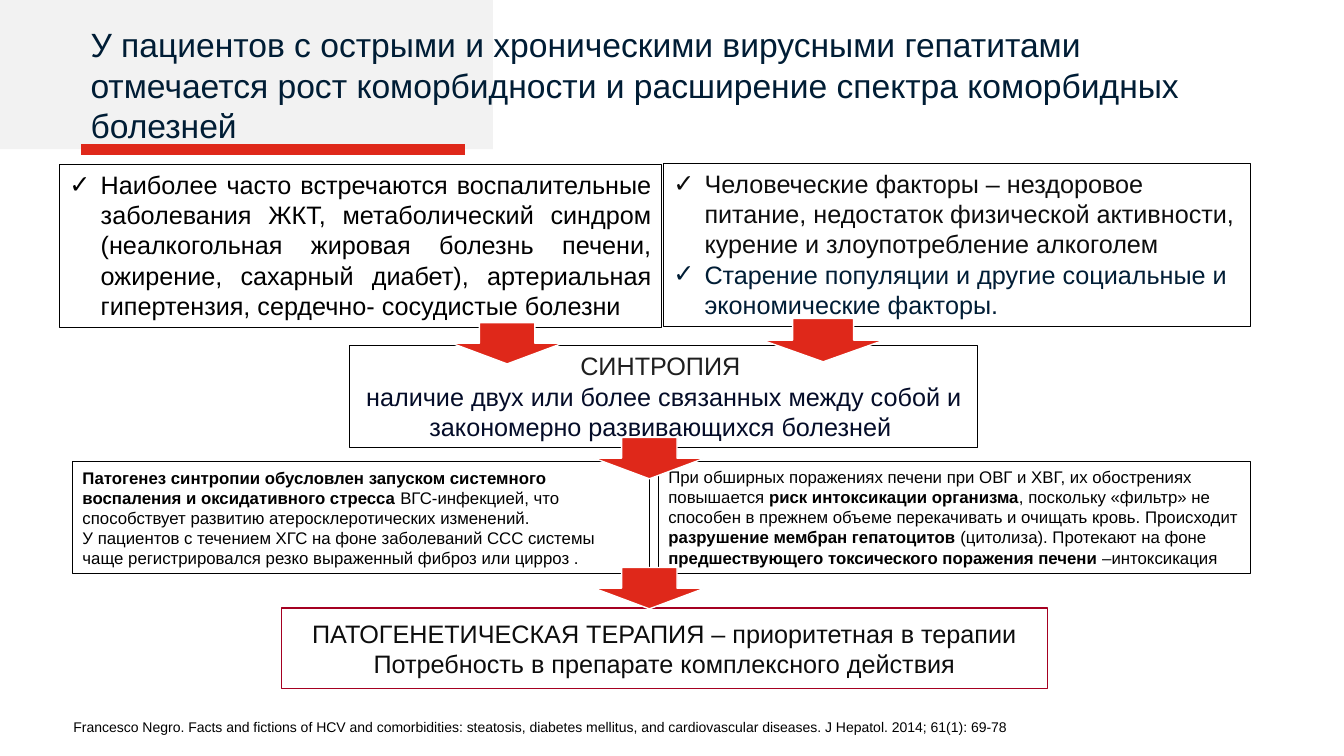
import dataclasses

import pptx
import pptx.dml.color
import pptx.enum.shapes
import pptx.enum.text
import pptx.util
from lxml import etree

ALIGN = pptx.enum.text.PP_ALIGN
ANCHOR = pptx.enum.text.MSO_ANCHOR
SHAPE = pptx.enum.shapes.MSO_SHAPE


@dataclasses.dataclass(frozen=True)
class Theme:
    font: str = "Arial"
    title_size: int = 24
    body_size: int = 18
    detail_size: int = 12
    source_size: int = 10
    navy: str = "001D35"
    midnight: str = "040C28"
    black: str = "000000"
    ink: str = "0D0D0D"
    charcoal: str = "1F1F1F"
    white: str = "FFFFFF"
    backdrop: str = "F2F2F2"
    red: str = "DF281A"
    crimson: str = "A50021"


THEME = Theme()
WIDTH, HEIGHT = 13.33, 7.5

# Places are left, top, width, height in percent of the slide.
BACKDROP = (0, 0, 36.68, 19.73)
TITLE_RULE = (6, 34.58)
TITLE_PLACE = (6, 2.53, 84.62, 21.6)
SOURCE_PLACE = (4.73, 94.4, 71.49, 3.6)

# A paragraph is a colour and its runs; a run is a text and whether it is bold.
TITLE = [(THEME.navy, [(
    "У пациентов с острыми и хроническими вирусными гепатитами отмечается "
    "рост коморбидности и расширение спектра коморбидных болезней", False)])]
SOURCE = [(THEME.black, [(
    "Francesco Negro. Facts and fictions of HCV and comorbidities: steatosis, "
    "diabetes mellitus, and cardiovascular diseases. J Hepatol. 2014; 61(1): 69-78", False)])]
COMMON_DISEASES = [(THEME.black, [(
    "Наиболее часто встречаются воспалительные заболевания ЖКТ, метаболический "
    "синдром (неалкогольная жировая болезнь печени, ожирение, сахарный диабет), "
    "артериальная гипертензия, сердечно- сосудистые болезни", False)])]
HUMAN_FACTORS = [
    (THEME.ink, [("Человеческие факторы – нездоровое питание, недостаток физической "
                  "активности, курение и злоупотребление алкоголем", False)]),
    (THEME.navy, [("Старение популяции и другие социальные и экономические факторы.", False)]),
]
SYNTROPY = [
    (THEME.charcoal, [("СИНТРОПИЯ ", False)]),
    (THEME.midnight, [("наличие двух или более связанных между собой и "
                       "закономерно развивающихся болезней ", False)]),
]
PATHOGENESIS = [
    (THEME.black, [
        ("Патогенез синтропии обусловлен запуском системного воспаления "
         "и оксидативного стресса ", True),
        ("ВГС-инфекцией, что способствует развитию атеросклеротических изменений.", False)]),
    (THEME.black, [("У пациентов с течением ХГС на фоне заболеваний ССС системы чаще "
                    "регистрировалcя резко выраженный фиброз или цирроз .", False)]),
]
LIVER_DAMAGE = [(THEME.black, [
    ("При обширных поражениях печени при ОВГ и ХВГ, их обострениях повышается ", False),
    ("риск интоксикации организма", True),
    (", поскольку «фильтр» не способен в прежнем объеме перекачивать и очищать кровь. "
     "Происходит ", False),
    ("разрушение мембран гепатоцитов ", True),
    ("(цитолиза). Протекают на фоне ", False),
    ("предшествующего токсического поражения печени ", True),
    ("–интоксикация", False)])]
THERAPY = [
    (THEME.ink, [("ПАТОГЕНЕТИЧЕСКАЯ ТЕРАПИЯ – приоритетная в терапии", False)]),
    (THEME.ink, [("Потребность в препарате комплексного действия", False)]),
]

# Place, paragraphs, frame and text format, from back to front.
UPPER_BOXES = [
    ((4.43, 21.73, 44.79, 21.6), COMMON_DISEASES, {},
     {"align": ALIGN.JUSTIFY, "bullet": "✓"}),
    ((49.36, 21.6, 43.66, 21.6), HUMAN_FACTORS, {}, {"bullet": "✓"}),
    ((26.03, 45.73, 46.74, 13.47), SYNTROPY, {}, {"align": ALIGN.CENTER}),
]
UPPER_ARROWS = [(33.61, 42.67, 8.25, 5.47), (56.71, 42.13, 9.08, 5.73)]
LOWER_BOXES = [
    ((5.4, 61.07, 42.91, 14.8), PATHOGENESIS, {"fill": THEME.white, "line_width": 1},
     {"size": THEME.detail_size, "anchor": ANCHOR.MIDDLE}),
    ((48.99, 61.07, 44.04, 14.8), LIVER_DAMAGE, {}, {"size": THEME.detail_size}),
    ((20.93, 80.4, 57.01, 10.67), THERAPY,
     {"fill": THEME.white, "line": THEME.crimson, "line_width": 1},
     {"align": ALIGN.CENTER, "anchor": ANCHOR.MIDDLE}),
]
LOWER_ARROWS = [(44.19, top, 8.25, 5.47) for top in (75.07, 57.87)]


def across(share):
    return pptx.util.Inches(WIDTH * share / 100)


def down(share):
    return pptx.util.Inches(HEIGHT * share / 100)


def locate(place):
    left, top, width, height = place
    return across(left), down(top), across(width), down(height)


def color(value):
    return pptx.dml.color.RGBColor.from_string(value)


def add_bullet(paragraph, character):
    properties = paragraph._p.get_or_add_pPr()
    indent = pptx.util.Inches(0.31)
    properties.set("marL", str(indent))
    properties.set("indent", str(-indent))
    namespace = "{http://schemas.openxmlformats.org/drawingml/2006/main}"
    etree.SubElement(properties, namespace + "buFont", typeface=THEME.font)
    etree.SubElement(properties, namespace + "buChar", char=character)


def write(shape, paragraphs, size=THEME.body_size, align=ALIGN.LEFT,
          anchor=ANCHOR.TOP, bullet=None, wrap=True):
    frame = shape.text_frame
    frame.word_wrap = wrap
    frame.vertical_anchor = anchor
    for index, (text_color, runs) in enumerate(paragraphs):
        paragraph = frame.add_paragraph() if index else frame.paragraphs[0]
        paragraph.alignment = align
        if bullet:
            add_bullet(paragraph, bullet)
        for text, bold in runs:
            run = paragraph.add_run()
            run.text = text
            run.font.name = THEME.font
            run.font.size = pptx.util.Pt(size)
            run.font.bold = bold
            run.font.color.rgb = color(text_color)


def add_block(slide, place, kind=SHAPE.RECTANGLE, fill=None, line=THEME.black, line_width=0.75):
    shape = slide.shapes.add_shape(kind, *locate(place))
    shape.shadow.inherit = False
    if fill:
        shape.fill.solid()
        shape.fill.fore_color.rgb = color(fill)
    else:
        shape.fill.background()
    if line:
        shape.line.color.rgb = color(line)
        shape.line.width = pptx.util.Pt(line_width)
    else:
        shape.line.fill.background()
    return shape


def add_title_rule(slide):
    start, end = TITLE_RULE
    level = down(BACKDROP[3])
    rule = slide.shapes.add_connector(
        pptx.enum.shapes.MSO_CONNECTOR.STRAIGHT, across(end), level, across(start), level)
    rule.line.color.rgb = color(THEME.red)
    rule.line.width = pptx.util.Pt(8)
    etree.SubElement(rule._element.spPr,
                     "{http://schemas.openxmlformats.org/drawingml/2006/main}effectLst")


def main():
    presentation = pptx.Presentation()
    presentation.slide_width = pptx.util.Inches(WIDTH)
    presentation.slide_height = pptx.util.Inches(HEIGHT)
    slide = presentation.slides.add_slide(presentation.slide_layouts[6])

    add_block(slide, BACKDROP, fill=THEME.backdrop, line=None)
    add_title_rule(slide)
    write(slide.shapes.add_textbox(*locate(TITLE_PLACE)), TITLE, size=THEME.title_size)
    for boxes, arrows in ((UPPER_BOXES, UPPER_ARROWS), (LOWER_BOXES, LOWER_ARROWS)):
        for place, paragraphs, frame_format, text_format in boxes:
            write(add_block(slide, place, **frame_format), paragraphs, **text_format)
        for place in arrows:
            add_block(slide, place, kind=SHAPE.DOWN_ARROW, fill=THEME.red,
                      line=THEME.white, line_width=1)
    write(slide.shapes.add_textbox(*locate(SOURCE_PLACE)), SOURCE,
          size=THEME.source_size, wrap=False)

    presentation.save("out.pptx")


if __name__ == "__main__":
    main()
